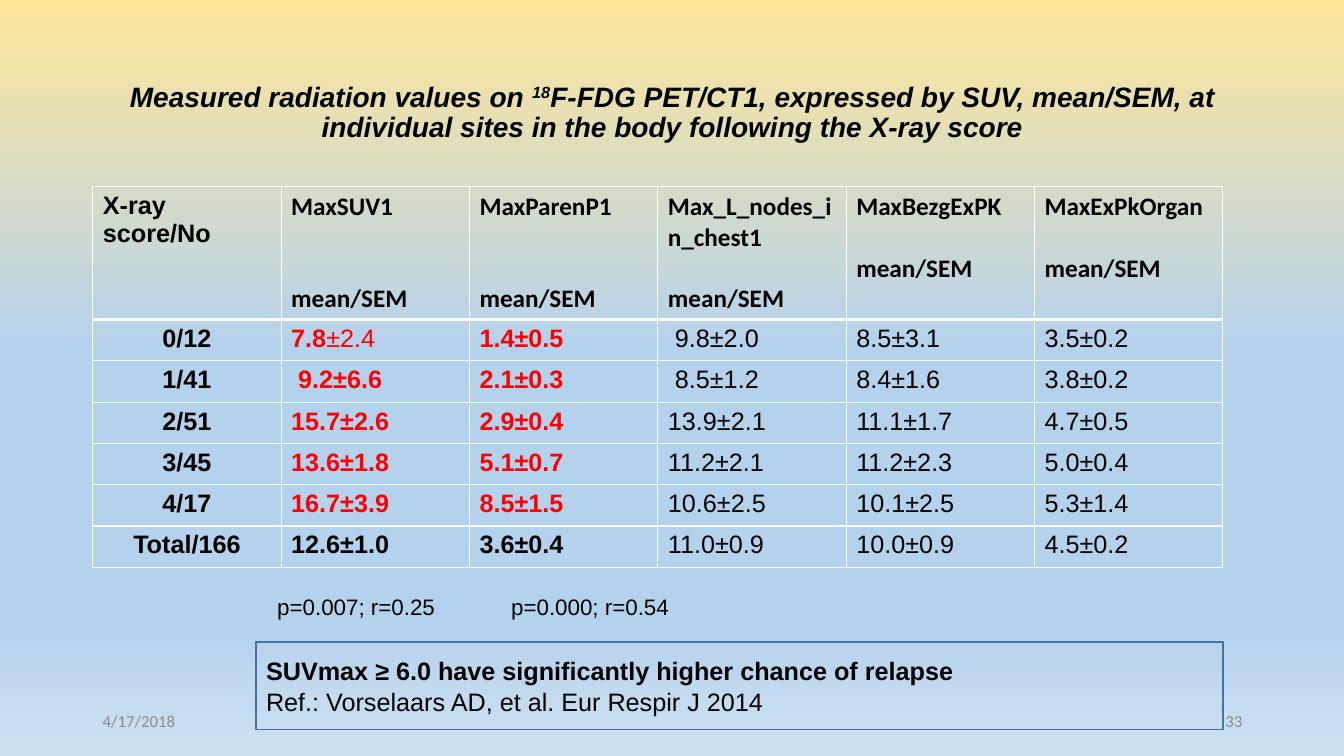
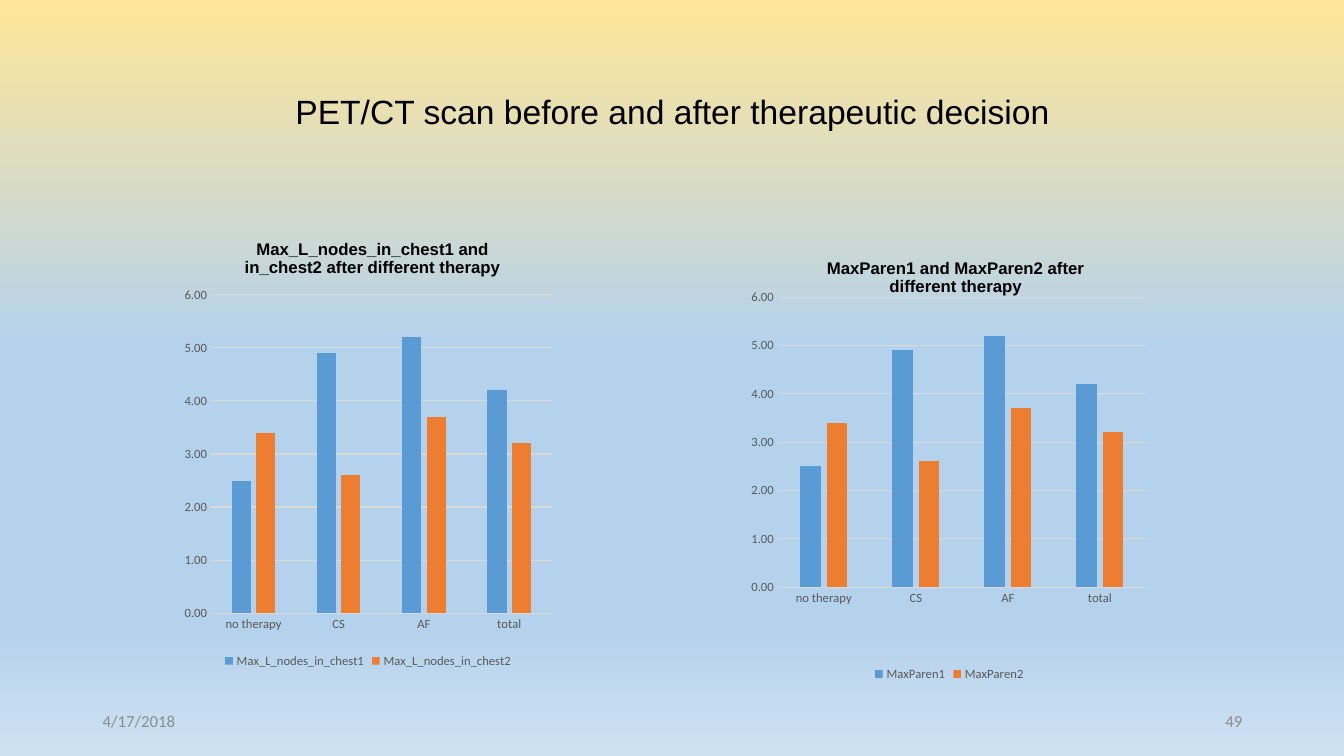
from dataclasses import dataclass

from lxml import etree
from pptx import Presentation
from pptx.chart.data import CategoryChartData
from pptx.dml.color import RGBColor
from pptx.enum.chart import XL_CHART_TYPE as ChartType
from pptx.enum.chart import XL_LEGEND_POSITION as LegendPosition
from pptx.enum.chart import XL_TICK_MARK as TickMark
from pptx.enum.shapes import MSO_SHAPE as Preset
from pptx.enum.text import MSO_ANCHOR as Anchor
from pptx.enum.text import MSO_AUTO_SIZE as AutoSize
from pptx.enum.text import PP_ALIGN as Align
from pptx.oxml.ns import qn
from pptx.util import Inches, Pt


@dataclass(frozen=True)
class Theme:
    heading: str = "Arial"
    body: str = "Calibri"
    ink: str = "000000"
    alert: str = "FF0000"
    muted: str = "8C8C8C"
    axis: str = "595959"
    grid: str = "D9D9D9"
    border: str = "FFFFFF"
    frame: str = "43739E"
    series: tuple = ("5B9BD5", "ED7D31")
    backdrop: tuple = ((0, "FFE699"), (46, "B5D2EC"), (83, "B5D2EC"), (100, "CEE1F2"))
    title_size: int = 24
    long_title_size: int = 20
    text_size: int = 18
    note_size: int = 16
    footer_size: int = 12
    chart_title_size: int = 12
    chart_size: int = 10
    axis_size: int = 9


THEME = Theme()

# Content: a paragraph is a list of spans, a span is text or (text, format)
DATE = "4/17/2018"
SUV_TITLE = [
    "Measured radiation values on ",
    ("18", {"baseline": 30}),
    "F-FDG PET/CT1, expressed by SUV, mean/SEM, at individual sites "
    "in the body following the X-ray score",
]
SCORE_HEADING = "X-ray score/No"
# Measure and the number of lines left free below its name
MEASURES = [("MaxSUV1", 2), ("MaxParenP1", 2), ("Max_L_nodes_in_chest1", 1),
            ("MaxBezgExPK", 1), ("MaxExPkOrgan", 1)]
SCORES = [
    ("0/12", "7.8±2.4", "1.4±0.5", " 9.8±2.0", "8.5±3.1", "3.5±0.2"),
    ("1/41", " 9.2±6.6", "2.1±0.3", " 8.5±1.2", "8.4±1.6", "3.8±0.2"),
    ("2/51", "15.7±2.6", "2.9±0.4", "13.9±2.1", "11.1±1.7", "4.7±0.5"),
    ("3/45", "13.6±1.8", "5.1±0.7", "11.2±2.1", "11.2±2.3", "5.0±0.4"),
    ("4/17", "16.7±3.9", "8.5±1.5", "10.6±2.5", "10.1±2.5", "5.3±1.4"),
    ("Total/166", "12.6±1.0", "3.6±0.4", "11.0±0.9", "10.0±0.9", "4.5±0.2"),
]
CORRELATIONS = [(2.75, "p=0.007; r=0.25"), (5.07, "p=0.000; r=0.54")]
RELAPSE_NOTE = [
    [("SUVmax ≥ 6.0 have significantly higher chance of relapse", {"bold": True})],
    ["Ref.: Vorselaars AD, et al. Eur Respir J 2014"],
]

THERAPY_TITLE = ["PET/CT scan before and after therapeutic decision"]
THERAPIES = ["no therapy", "CS", "AF", "total"]
BEFORE, AFTER = (2.5, 4.9, 5.2, 4.2), (3.4, 2.6, 3.7, 3.2)
# Places of title and plot are fractions of the chart
CHARTS = [
    {"title": "Max_L_nodes_in_chest1 and in_chest2 after different therapy",
     "names": ("Max_L_nodes_in_chest1", "Max_L_nodes_in_chest2"),
     "at": (1.75, 2.16, 3.8, 4.51),
     "title_at": (0.17, 0.04), "plot_at": (0.09, 0.17, 0.89, 0.7)},
    {"title": "MaxParen1 and MaxParen2 after different therapy",
     "names": ("MaxParen1", "MaxParen2"),
     "at": (7.34, 2.16, 4.15, 4.64),
     "title_at": (0.2, 0.08), "plot_at": (0.09, 0.17, 0.88, 0.62)},
]


def rgb(color):
    return RGBColor.from_string(color)


def place(at):
    return [Inches(length) for length in at]


def set_font(font, size, color, name, bold=False, italic=False):
    font.size, font.name = Pt(size), name
    font.bold, font.italic = bold, italic
    font.color.rgb = rgb(color)


def write(frame, paragraphs, *, size=THEME.text_size, name=THEME.heading,
          color=THEME.ink, bold=False, italic=False, align=Align.LEFT,
          spacing=None, gap=0):
    """Fill a text frame; gap is the space before all but the first paragraph."""
    for index, spans in enumerate(paragraphs):
        para = frame.add_paragraph() if index else frame.paragraphs[0]
        para.alignment = align
        if spacing:
            para.line_spacing = spacing
        if index and gap:
            para.space_before = Pt(gap)
        for item in spans:
            text, extra = (item, {}) if isinstance(item, str) else item
            look = {"size": size, "name": name, "color": color,
                    "bold": bold, "italic": italic, **extra}
            baseline = look.pop("baseline", 0)
            span = para.add_run()
            span.text = text
            set_font(span.font, **look)
            if baseline:
                span.font._element.set("baseline", str(baseline * 1000))


def add_text(page, at, text, **look):
    box = page.shapes.add_textbox(*place(at))
    box.text_frame.word_wrap = True
    box.text_frame.vertical_anchor = Anchor.MIDDLE
    write(box.text_frame, [[text]], **look)
    return box


# Shared parts
def paint_backdrop(master):
    fill = master.background.fill
    fill.gradient()
    fill.gradient_angle = 270
    stops = master._element.find(".//" + qn("p:bg")).find(".//" + qn("a:gsLst"))
    for stop in list(stops):
        stops.remove(stop)
    for percent, color in THEME.backdrop:
        stop = etree.SubElement(stops, qn("a:gs"), pos=str(percent * 1000))
        etree.SubElement(stop, qn("a:srgbClr"), val=color)


def add_page(deck, title, number, **look):
    page = deck.slides.add_slide(deck.slide_layouts[5])
    box = page.shapes.title
    box.left, box.top, box.width, box.height = place((0.92, 0.4, 11.5, 1.45))
    box.text_frame.word_wrap = True
    box.text_frame.auto_size = AutoSize.NONE
    box.text_frame.vertical_anchor = Anchor.MIDDLE
    write(box.text_frame, [title], align=Align.CENTER, spacing=0.9, **look)
    for left, text, align in ((0.92, DATE, Align.LEFT), (9.42, number, Align.RIGHT)):
        add_text(page, (left, 6.95, 3, 0.4), text, align=align, name=THEME.body,
                 size=THEME.footer_size, color=THEME.muted)
    return page


# Table of scores
def set_borders(cell, **widths):
    props = cell._tc.get_or_add_tcPr()
    for index, side in enumerate("LRTB"):
        line = etree.Element(qn("a:ln" + side), w=str(Pt(widths.get(side, 1))))
        fill = etree.SubElement(line, qn("a:solidFill"))
        etree.SubElement(fill, qn("a:srgbClr"), val=THEME.border)
        props.insert(index, line)


def add_score_table(page):
    rows, columns = len(SCORES) + 1, len(MEASURES) + 1
    header_height, row_height, width = 1.32, 0.41, 11.21
    height = header_height + row_height * len(SCORES)
    table = page.shapes.add_table(
        rows, columns, *place((0.92, 1.85, width, height))).table
    table.first_row = table.horz_banding = False
    for column in table.columns:
        column.width = Inches(width / columns)
    for index, row in enumerate(table.rows):
        row.height = Inches(row_height if index else header_height)
        for cell in row.cells:
            cell.fill.background()
            set_borders(cell, **({0: {"B": 3}, 1: {"T": 3}}.get(index, {})))

    write(table.cell(0, 0).text_frame, [[SCORE_HEADING]], bold=True)
    for column, (measure, free_lines) in enumerate(MEASURES, 1):
        write(table.cell(0, column).text_frame, [[measure], ["mean/SEM"]],
              name=THEME.body, bold=True, gap=22 * free_lines)

    for row, values in enumerate(SCORES, 1):
        for column, value in enumerate(values):
            spans = [value]
            if (row, column) == (1, 1):
                mean, error = value.split("±")
                spans = [mean, ("±" + error, {"bold": False})]
            marked = column in (1, 2) and row < len(SCORES)
            write(table.cell(row, column).text_frame, [spans], bold=column < 3,
                  color=THEME.alert if marked else THEME.ink,
                  align=Align.LEFT if column else Align.CENTER)


def build_score_page(deck):
    page = add_page(deck, SUV_TITLE, "33", size=THEME.long_title_size,
                    bold=True, italic=True)
    add_score_table(page)
    for left, text in CORRELATIONS:
        box = add_text(page, (left, 5.84, 1.8, 0.36), text, size=THEME.note_size)
        box.text_frame.margin_left = box.text_frame.margin_right = 0
    note = page.shapes.add_shape(Preset.RECTANGLE, *place((2.54, 6.37, 9.59, 0.87)))
    note.shadow.inherit = False
    note.fill.background()
    note.line.color.rgb = rgb(THEME.frame)
    note.line.width = Pt(1)
    note.text_frame.word_wrap = True
    note.text_frame.vertical_anchor = Anchor.MIDDLE
    write(note.text_frame, RELAPSE_NOTE)


# Charts of therapies
def set_layout(parent, index, fractions, inner=False):
    old = parent.find(qn("c:layout"))
    if old is not None:
        parent.remove(old)
    layout = etree.Element(qn("c:layout"))
    parent.insert(index, layout)
    manual = etree.SubElement(layout, qn("c:manualLayout"))
    if inner:
        etree.SubElement(manual, qn("c:layoutTarget"), val="inner")
    for tag in ("xMode", "yMode"):
        etree.SubElement(manual, qn("c:" + tag), val="edge")
    for tag, fraction in zip("xywh", fractions):
        etree.SubElement(manual, qn("c:" + tag), val=str(fraction))


def add_therapy_chart(page, title, names, at, title_at, plot_at):
    data = CategoryChartData(number_format="0.00")
    data.categories = THERAPIES
    for name, values in zip(names, (BEFORE, AFTER)):
        data.add_series(name, values)
    chart = page.shapes.add_chart(ChartType.COLUMN_CLUSTERED, *place(at), data).chart
    set_font(chart.font, THEME.chart_size, THEME.ink, THEME.body)

    chart.has_title = True
    write(chart.chart_title.text_frame, [[title]], size=THEME.chart_title_size,
          bold=True, align=Align.CENTER)
    chart.chart_title.include_in_layout = False
    set_layout(chart.chart_title._element, 1, title_at)
    set_layout(chart._chartSpace.chart.plotArea, 0, plot_at, inner=True)

    chart.has_legend = True
    chart.legend.position = LegendPosition.BOTTOM
    chart.legend.include_in_layout = False
    small_text = (THEME.axis_size, THEME.axis, THEME.body)
    set_font(chart.legend.font, *small_text)

    plot = chart.plots[0]
    plot.gap_width, plot.overlap, plot.vary_by_categories = 219, -27, False
    for series, color in zip(plot.series, THEME.series):
        series.format.fill.solid()
        series.format.fill.fore_color.rgb = rgb(color)
        series.invert_if_negative = False

    categories, values = chart.category_axis, chart.value_axis
    for axis in (categories, values):
        axis.major_tick_mark = axis.minor_tick_mark = TickMark.NONE
        set_font(axis.tick_labels.font, *small_text)
    values.minimum_scale, values.maximum_scale, values.major_unit = 0, 6, 1
    values.tick_labels.number_format = "0.00"
    values.tick_labels.number_format_is_linked = False
    values.format.line.fill.background()
    for line in (categories.format.line, values.major_gridlines.format.line):
        line.color.rgb = rgb(THEME.grid)
        line.width = Pt(0.75)


def build_therapy_page(deck):
    page = add_page(deck, THERAPY_TITLE, "49", size=THEME.title_size)
    for chart in CHARTS:
        add_therapy_chart(page, **chart)


def main():
    deck = Presentation()
    deck.slide_width, deck.slide_height = Inches(13.33), Inches(7.5)
    paint_backdrop(deck.slide_master)
    build_score_page(deck)
    build_therapy_page(deck)
    deck.save("out.pptx")


if __name__ == "__main__":
    main()
